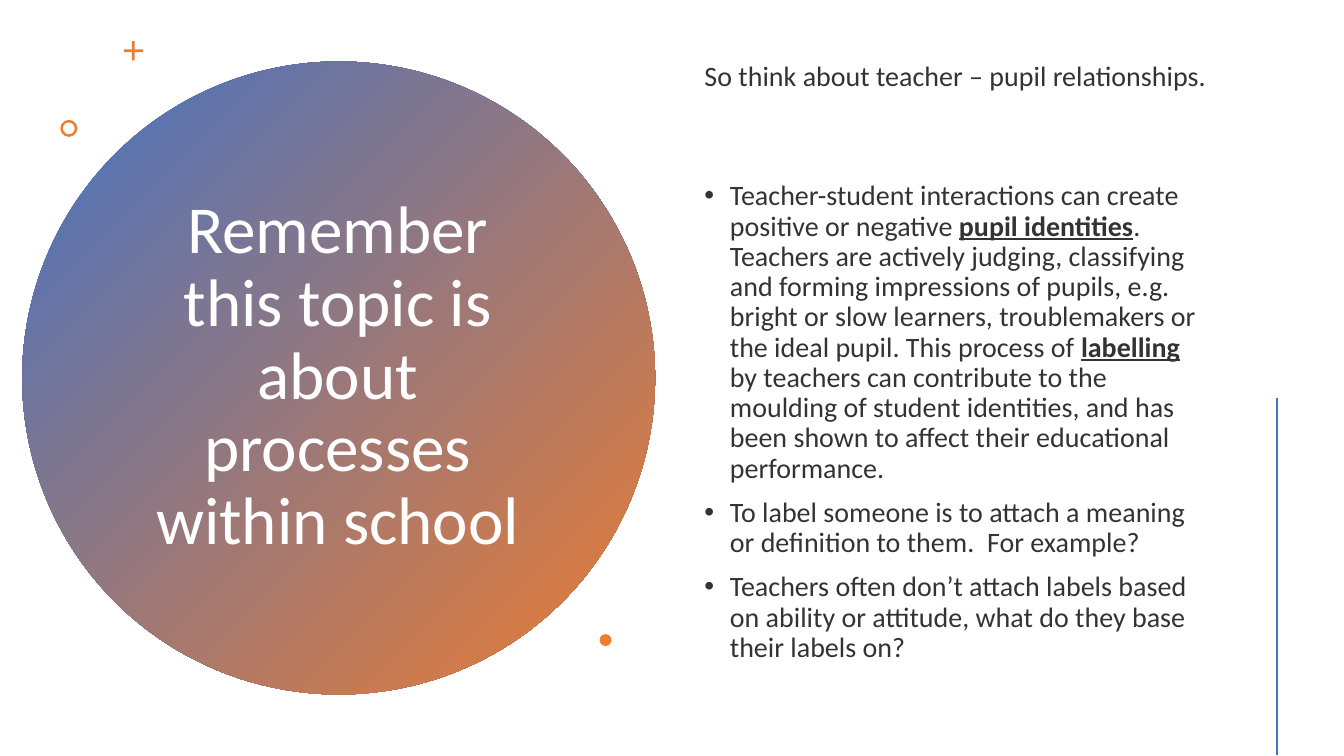
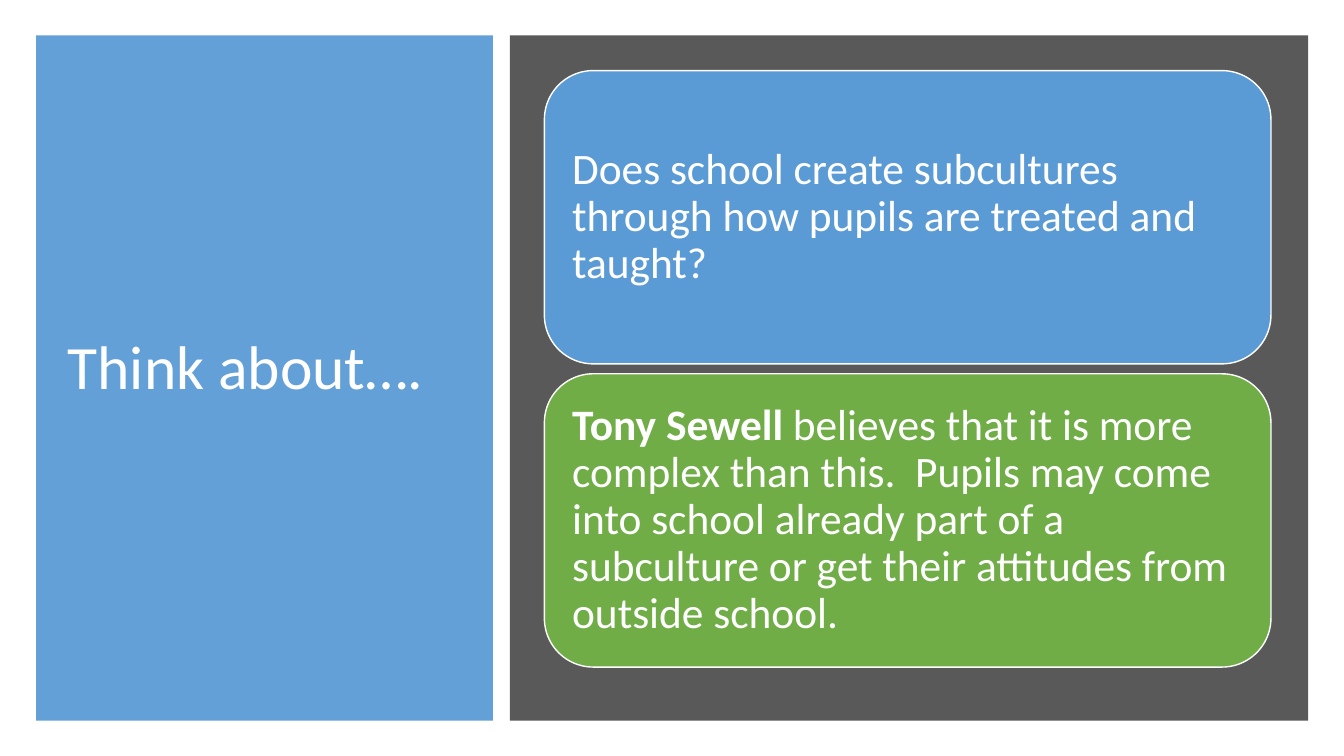
from pptx import Presentation
from pptx.dml.color import RGBColor
from pptx.enum import shapes, text
from pptx.oxml import xmlchemy
from pptx.oxml import ns
from pptx.util import Cm, Pt
from lxml import etree

WIDTH, HEIGHT = 33.87, 19.05
FONT = "Calibri"
WHITE = RGBColor(0xFF, 0xFF, 0xFF)
INK = RGBColor(0x33, 0x33, 0x33)
BLUE = RGBColor(0x44, 0x72, 0xC4)
ORANGE = RGBColor(0xED, 0x7D, 0x31)
SKY = RGBColor(0x5B, 0x9B, 0xD5)
PALE = RGBColor(0x63, 0xA0, 0xD7)
GREEN = RGBColor(0x70, 0xAD, 0x47)
GREY = RGBColor(0x59, 0x59, 0x59)

KIND = shapes.MSO_SHAPE
LEFT, CENTER = text.PP_ALIGN.LEFT, text.PP_ALIGN.CENTER
TOP, MIDDLE = text.MSO_ANCHOR.TOP, text.MSO_ANCHOR.MIDDLE

LEAD = "So think about teacher – pupil relationships."
POINTS = [
    "Teacher-student interactions can create positive or negative "
    "*pupil identities*. Teachers are actively judging, classifying and "
    "forming impressions of pupils, e.g. bright or slow learners, "
    "troublemakers or the ideal pupil. This process of *labelling* by "
    "teachers can contribute to the moulding of student identities, and has "
    "been shown to affect their educational performance.",
    "To label someone is to attach a meaning or definition to them.  For example?",
    "Teachers often don’t attach labels based on ability or attitude, "
    "what do they base their labels on?",
]
CARDS = [
    (SKY, "Does school create subcultures through how pupils are treated and taught?"),
    (GREEN, "*Tony Sewell* believes that it is more complex than this.  Pupils may "
            "come into school already part of a subculture or get their attitudes "
            "from outside school."),
]


def place(item, box):
    item.left, item.top, item.width, item.height = map(Cm, box)


def add_form(slide, kind, box, fill=None, line=None):
    form = slide.shapes.add_shape(kind, *map(Cm, box))
    form.shadow.inherit = False
    if fill is not None:
        form.fill.solid()
        form.fill.fore_color.rgb = fill
    if line is None:
        form.line.fill.background()
    else:
        form.line.color.rgb = line
        form.line.width = Pt(1)
    return form


def set_frame(frame, anchor, inset=None):
    frame.word_wrap = True
    frame.auto_size = text.MSO_AUTO_SIZE.NONE
    frame.vertical_anchor = anchor
    if inset is not None:
        frame.margin_left = frame.margin_right = Cm(inset)
        frame.margin_top = frame.margin_bottom = Cm(inset)


def write(para, words, size, color, align=LEFT, under=False):
    para.alignment = align
    para.line_spacing = 0.9
    para.space_before = para.space_after = Pt(0)
    for num, part in enumerate(words.split("*")):
        if not part:
            continue
        run = para.add_run()
        run.text = part
        run.font.name = FONT
        run.font.size = Pt(size)
        run.font.color.rgb = color
        run.font.bold = num % 2 == 1
        run.font.underline = under and num % 2 == 1


def set_bullet(para, mark=None):
    props = para._p.get_or_add_pPr()
    indent = Cm(0.64) if mark else 0
    props.set("marL", str(indent))
    props.set("indent", str(-indent))
    if mark:
        etree.SubElement(props, ns.qn("a:buChar")).set("char", mark)
    else:
        etree.SubElement(props, ns.qn("a:buNone"))


def add_title(slide, box, words, size, align):
    title = slide.shapes.title
    place(title, box)
    title.element.getparent().append(title.element)
    set_frame(title.text_frame, MIDDLE)
    write(title.text_frame.paragraphs[0], words, size, WHITE, align)


def add_disc(slide, box, words):
    x, y, w, h = box
    disc = add_form(slide, KIND.OVAL, box)
    disc.fill.gradient()
    disc.fill.gradient_angle = 315
    for stop, color in zip(disc.fill.gradient_stops, (BLUE, ORANGE)):
        stop.color.rgb = color
    add_title(slide, (x + 2.89, y + 2.03, w - 5.82, h - 4.09), words, 48, CENTER)
    plus = add_form(slide, KIND.CROSS, (x + 2.56, y - 0.51, 0.48, 0.48), ORANGE)
    plus.adjustments[0] = 0.43
    ring = add_form(slide, KIND.DONUT, (x + 0.96, y + 1.47, 0.43, 0.43), ORANGE)
    ring.adjustments[0] = 0.15
    add_form(slide, KIND.OVAL, (x + 14.55, y + 14.43, 0.3, 0.3), ORANGE)


def add_list(slide, box, lead, points):
    body = slide.placeholders[1]
    place(body, box)
    frame = body.text_frame
    set_frame(frame, TOP)
    first = frame.paragraphs[0]
    write(first, lead, 20, INK)
    first.space_after = Pt(53.5)
    set_bullet(first)
    for words in points:
        para = frame.add_paragraph()
        write(para, words, 20, INK, under=True)
        para.space_before = Pt(10)
        set_bullet(para, "•")


def add_rule(slide, x, top, end):
    rule = slide.shapes.add_connector(
        shapes.MSO_CONNECTOR.STRAIGHT, Cm(x), Cm(top), Cm(x), Cm(end))
    rule.line.color.rgb = BLUE
    rule.line.width = Pt(2)
    etree.SubElement(rule.element.spPr, ns.qn("a:effectLst"))


def add_panel(slide, box, words):
    x, y, w, h = box
    add_form(slide, KIND.RECTANGLE, box, PALE)
    add_title(slide, (x + 0.54, y + 0.74, w - 1.17, h - 1.93), words, 44, LEFT)


def add_cards(slide, box, cards):
    x, y, w, h = box
    add_form(slide, KIND.RECTANGLE, box, GREY)
    tall, gap = 7.39, 0.25
    for row, (color, words) in enumerate(cards):
        spot = (x + 0.87, y + 0.89 + row * (tall + gap), w - 1.81, tall)
        card = add_form(slide, KIND.ROUNDED_RECTANGLE, spot, color, WHITE)
        set_frame(card.text_frame, MIDDLE, 0.34)
        card.text_frame.margin_left = card.text_frame.margin_right = Cm(0.34)
        write(card.text_frame.paragraphs[0], words, 31, WHITE)


def build_topic(deck):
    slide = deck.slides.add_slide(deck.slide_layouts[1])
    add_disc(slide, (0.56, 1.55, 15.95, 15.95),
             "Remember this topic is about processes within school")
    add_list(slide, (17.5, 1.45, 13.26, 16.2), LEAD, POINTS)
    add_rule(slide, 32.18, 10.03, 19.02)


def build_think(deck):
    slide = deck.slides.add_slide(deck.slide_layouts[5])
    add_panel(slide, (0.91, 0.89, 11.51, 17.27), "Think about….")
    add_cards(slide, (12.85, 0.89, 20.12, 17.27), CARDS)


def main():
    deck = Presentation()
    deck.slide_width, deck.slide_height = Cm(WIDTH), Cm(HEIGHT)
    build_topic(deck)
    build_think(deck)
    deck.save("out.pptx")


if __name__ == "__main__":
    main()
